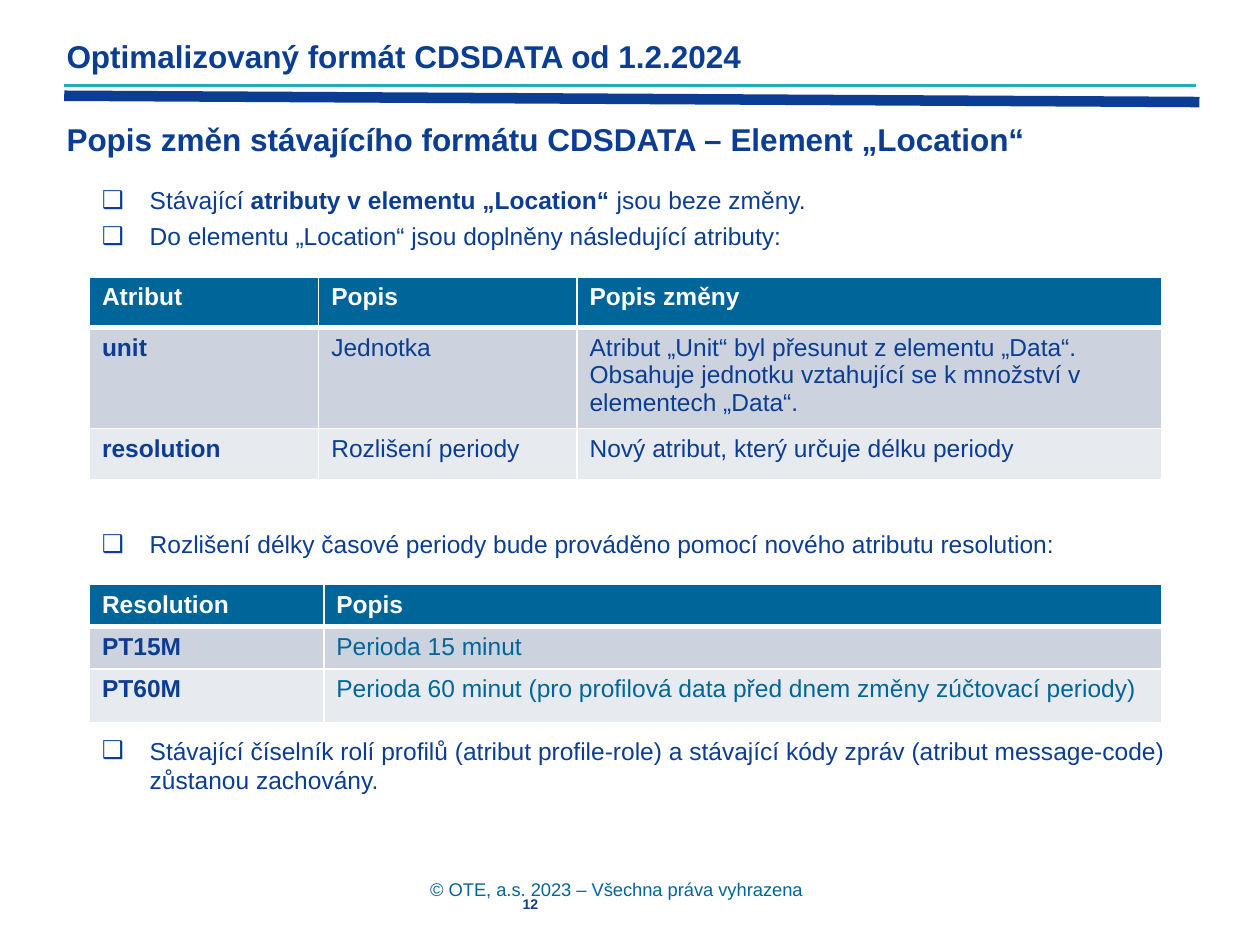
import pptx
import pptx.util
import pptx.dml.color
import pptx.enum.shapes
import pptx.enum.text
import pptx.oxml.ns
from lxml import etree

UNIT = 0.1
NAVY, TEAL, AQUA, WHITE = "0B3D92", "006699", "28ABB7", "FFFFFF"
BANDS = ["CCD3DE", "E7EAEF"]
HEADS = [
    ("Optimalizovaný formát CDSDATA od 1.2.2024", 2.8),
    ("Popis změn stávajícího formátu CDSDATA – Element „Location“", 9.4),
]
LISTS = [
    ((7.1, 14.2, 89.6, 6), [
        [("Stávající ", False), ("atributy v elementu „Location“ ", True), ("jsou beze změny.", False)],
        [("Do elementu „Location“ jsou doplněny následující atributy:", False)],
    ]),
    ((7.1, 41.5, 89.6, 3.3), [
        [("Rozlišení délky časové periody bude prováděno pomocí nového atributu resolution:", False)],
    ]),
    ((7.1, 57.9, 89.6, 5.6), [
        [("Stávající číselník rolí profilů (atribut profile-role) a stávající kódy zpráv "
          "(atribut message-code) zůstanou zachovány.", False)],
    ]),
]
ATTRS = [
    ["Atribut", "Popis", "Popis změny"],
    ["unit", "Jednotka", "Atribut „Unit“ byl přesunut z elementu „Data“. "
     "Obsahuje jednotku vztahující se k množství v elementech „Data“."],
    ["resolution", "Rozlišení periody", "Nový atribut, který určuje délku periody"],
]
TIMES = [
    ["Resolution", "Popis"],
    ["PT15M", "Perioda 15 minut"],
    ["PT60M", "Perioda 60 minut (pro profilová data před dnem změny zúčtovací periody)"],
]


def grid(*cells):
    return [pptx.util.Inches(c * UNIT) for c in cells]


def tint(code):
    return pptx.dml.color.RGBColor.from_string(code)


def node(root, tag, **attrs):
    return etree.SubElement(root, pptx.oxml.ns.qn(tag), **attrs)


def add_run(para, text, size, code, bold=False):
    run = para.add_run()
    run.text = text
    font = run.font
    font.name, font.size, font.bold = "Arial", pptx.util.Pt(size), bold
    font.color.rgb = tint(code)


def add_box(slide, box):
    frame = slide.shapes.add_textbox(*grid(*box)).text_frame
    frame.word_wrap = True
    return frame


def add_rule(slide, ends, code, width):
    kind = pptx.enum.shapes.MSO_CONNECTOR.STRAIGHT
    rule = slide.shapes.add_connector(kind, *grid(*ends))
    rule.line.color.rgb = tint(code)
    rule.line.width = pptx.util.Pt(width)
    node(rule._element.spPr, "a:effectLst")


def add_head(slide, text, box):
    para = add_box(slide, box).paragraphs[0]
    para.line_spacing = 0.9
    add_run(para, text, 18, NAVY, True)


def add_list(slide, items, box):
    frame = add_box(slide, box)
    for i, item in enumerate(items):
        para = frame.add_paragraph() if i else frame.paragraphs[0]
        props = para._p.get_or_add_pPr()
        dent = grid(3.8)[0]
        props.set("marL", str(dent))
        props.set("indent", str(-dent))
        node(node(props, "a:buClr"), "a:srgbClr", val=NAVY)
        node(props, "a:buFont", typeface="Arial")
        node(props, "a:buChar", char="❑")
        if i:
            para.space_before = pptx.util.Pt(4)
        for text, bold in item:
            add_run(para, text, 14, NAVY, bold)


def add_edges(cell, top, base):
    props = cell._tc.get_or_add_tcPr()
    for side, width in (("L", 1), ("R", 1), ("T", top), ("B", base)):
        line = node(props, "a:ln" + side, w=str(pptx.util.Pt(width)))
        node(node(line, "a:solidFill"), "a:srgbClr", val=WHITE)


def add_grid(slide, data, box, cols, rows, ink):
    table = slide.shapes.add_table(len(rows), len(cols), *grid(*box)).table
    for col, width in zip(table.columns, grid(*cols)):
        col.width = width
    for row, height in zip(table.rows, grid(*rows)):
        row.height = height
    for r, line in enumerate(data):
        for c, text in enumerate(line):
            cell = table.cell(r, c)
            add_edges(cell, 3 if r == 1 else 1, 1 if r else 3)
            cell.fill.solid()
            cell.fill.fore_color.rgb = tint(BANDS[r - 1] if r else TEAL)
            code = WHITE if r == 0 else ink if c else NAVY
            add_run(cell.text_frame.paragraphs[0], text, 14, code, r == 0 or c == 0)


def add_foot(slide, box):
    left, top, wide, _ = box
    kind = pptx.enum.shapes.MSO_SHAPE.RECTANGLE
    plate = slide.shapes.add_shape(kind, *grid(left - 1.8, top + 1.4, 90.5, 2.3))
    plate.shadow.inherit = False
    plate.fill.solid()
    plate.fill.fore_color.rgb = tint(WHITE)
    plate.line.fill.background()
    frame = plate.text_frame
    frame.margin_right = grid(17.9)[0]
    frame.vertical_anchor = pptx.enum.text.MSO_ANCHOR.MIDDLE
    note = add_box(slide, box)
    for para in (frame.paragraphs[0], note.paragraphs[0]):
        para.alignment = pptx.enum.text.PP_ALIGN.CENTER
    add_run(frame.paragraphs[0], "12", 8, NAVY, True)
    add_run(note.paragraphs[0], "© OTE, a.s. 2023 – Všechna práva vyhrazena", 10.5, TEAL)


def main():
    deck = pptx.Presentation()
    deck.slide_width, deck.slide_height = grid(100, 75)
    slide = deck.slides.add_slide(deck.slide_layouts[6])
    add_rule(slide, (5.1, 7.6, 95.2, 8.1), NAVY, 6)
    add_rule(slide, (5.1, 6.8, 94.9, 6.8), AQUA, 2)
    for text, top in HEADS:
        add_head(slide, text, (4.3, top, 80.7, 5.5))
    for box, items in LISTS:
        add_list(slide, items, box)
    add_grid(slide, ATTRS, (7.1, 22, 85.1, 15.6), (18.2, 20.5, 46.4), (4, 7.5, 4.1), NAVY)
    add_grid(slide, TIMES, (7.1, 46.4, 85.1, 10.7), (18.6, 66.5), (3.2, 3.2, 4.3), TEAL)
    add_foot(slide, (7.1, 69.2, 83.7, 5))
    deck.save("out.pptx")


if __name__ == "__main__":
    main()
